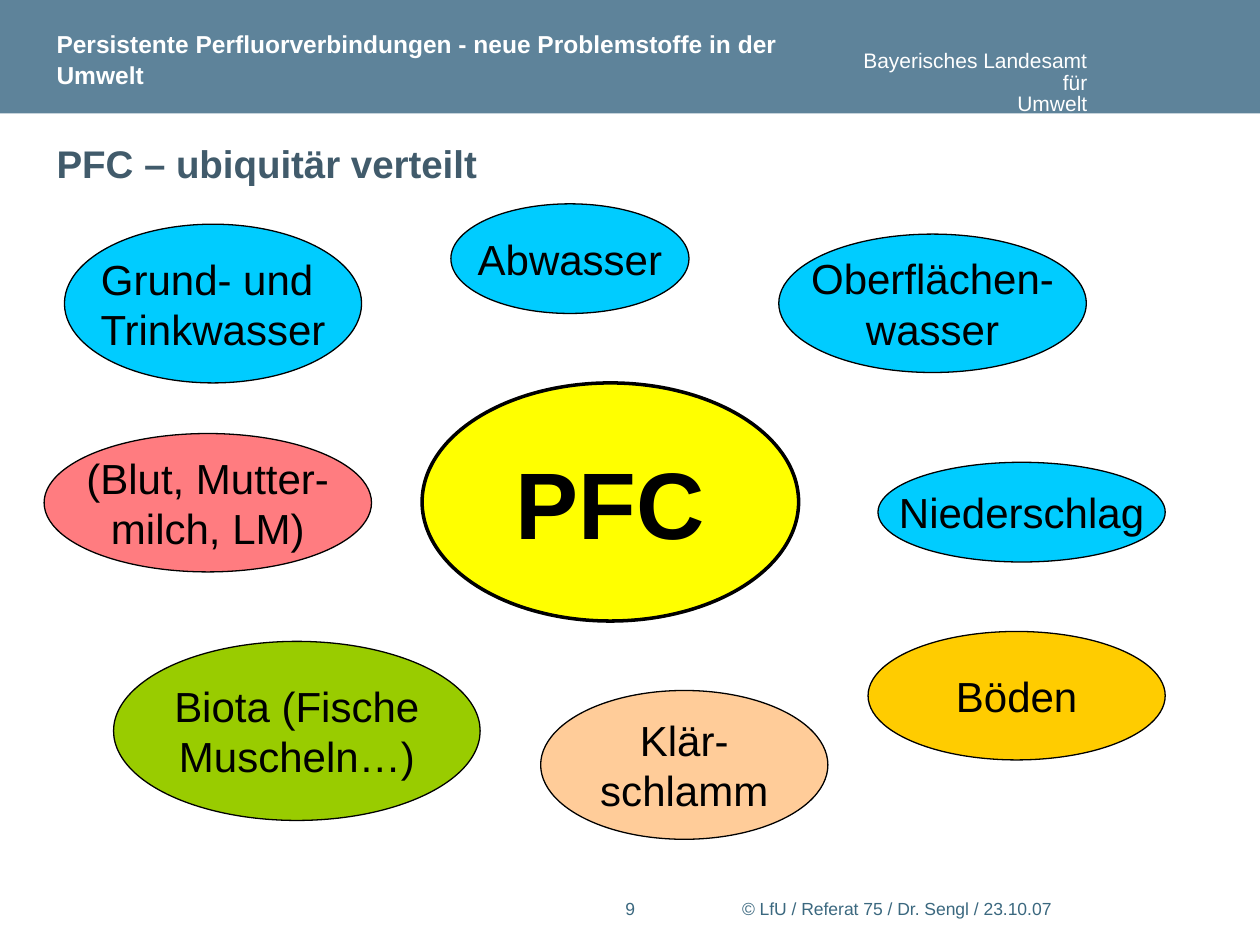
"""Build the slide showing where PFC is found in the environment."""
from pptx import Presentation
from pptx import util as u
from pptx.dml import color
from pptx.enum import shapes, text

COLORS = {
    "band": "5E839A", "white": "FFFFFF", "black": "000000",
    "title": "415B6B", "footer": "3B687F", "centre": "FFFF00",
    "water": "00CCFF", "soil": "FFCC00", "sludge": "FFCC99",
    "human": "FF7C80", "biota": "99CC00",
}

MEDIA = [
    ("Niederschlag", "water", (17.7, 9.32, 5.79, 2.01)),
    ("Grund- und \nTrinkwasser", "water", (1.3, 4.52, 5.99, 3.2)),
    ("Abwasser", "water", (9.09, 4.11, 4.8, 2.21)),
    ("Oberflächen-\nwasser", "water", (15.7, 4.72, 6.2, 2.79)),
    ("Böden", "soil", (17.5, 12.73, 5.99, 2.59)),
    ("Klär-\nschlamm", "sludge", (10.9, 13.92, 5.79, 3)),
    ("(Blut, Mutter-\nmilch, LM)", "human", (0.89, 8.74, 6.6, 2.79)),
    ("Biota (Fische\nMuscheln…)", "biota", (2.29, 12.93, 7.39, 3.61)),
]


def rgb(name):
    """Return the named colour."""
    return color.RGBColor.from_string(COLORS[name])


def write(box, words, size, ink, bold=False, align="LEFT", spacing=None):
    """Write one paragraph per line of words into a shape or text box."""
    frame = box.text_frame
    frame.text = words
    for para in frame.paragraphs:
        para.alignment = getattr(text.PP_ALIGN, align)
        if spacing:
            para.line_spacing = spacing
        para.font.name = "Arial"
        para.font.size = u.Pt(size)
        para.font.bold = bold
        para.font.color.rgb = rgb(ink)


def add_text(page, words, place, size, ink, anchor="TOP", **style):
    """Add a wrapping text box and return its frame."""
    box = page.shapes.add_textbox(*map(u.Cm, place))
    frame = box.text_frame
    frame.word_wrap = True
    frame.vertical_anchor = getattr(text.MSO_ANCHOR, anchor)
    write(box, words, size, ink, **style)
    return frame


def add_filled(page, kind, fill, place):
    """Add a preset shape with a plain fill and no shadow."""
    shape = page.shapes.add_shape(kind, *map(u.Cm, place))
    shape.shadow.inherit = False
    shape.fill.solid()
    shape.fill.fore_color.rgb = rgb(fill)
    return shape


def add_ellipse(page, words, fill, place, size=24, line=0.75, bold=False):
    """Add an outlined ellipse with centred text."""
    ellipse = add_filled(page, shapes.MSO_SHAPE.OVAL, fill, place)
    ellipse.line.color.rgb = rgb("black")
    ellipse.line.width = u.Pt(line)
    ellipse.text_frame.word_wrap = False
    ellipse.text_frame.vertical_anchor = text.MSO_ANCHOR.MIDDLE
    write(ellipse, words, size, "black", bold=bold, align="CENTER")


def add_header(page):
    """Add the coloured band with the talk title and the agency name."""
    band = add_filled(page, shapes.MSO_SHAPE.RECTANGLE, "band", (0, 0, 25.4, 2.29))
    band.line.fill.background()
    agency = add_text(page, "Bayerisches Landesamt für\nUmwelt",
                      (17.35, 1.04, 4.57, 0.86), 12, "white",
                      align="RIGHT", spacing=0.85)
    agency.margin_left = agency.margin_right = 0
    agency.margin_top = agency.margin_bottom = 0
    add_text(page, "Persistente Perfluorverbindungen - neue Problemstoffe in der Umwelt",
             (0.89, 0.61, 15.39, 1.32), 14, "white", anchor="BOTTOM",
             bold=True, spacing=1.05)


def add_footer(page):
    """Add the copyright line and the page number."""
    add_text(page, "© LfU / Referat 75 / Dr. Sengl / 23.10.07",
             (14.71, 17.98, 10.21, 0.79), 10, "footer")
    add_text(page, "9", (12.17, 17.98, 1.07, 0.79), 10, "footer", align="CENTER")


def main():
    """Create and save the deck."""
    deck = Presentation()
    deck.slide_width, deck.slide_height = u.Cm(25.4), u.Cm(19.05)
    page = deck.slides.add_slide(deck.slide_layouts[6])
    add_header(page)
    add_footer(page)
    add_text(page, "PFC – ubiquitär verteilt", (0.89, 2.59, 23.8, 1.4),
             22, "title", anchor="MIDDLE", bold=True)
    add_ellipse(page, "PFC", "centre", (8.51, 7.72, 7.59, 4.8),
                size=54, line=2, bold=True)
    for words, fill, place in MEDIA:
        add_ellipse(page, words, fill, place)
    deck.save("out.pptx")


if __name__ == "__main__":
    main()
